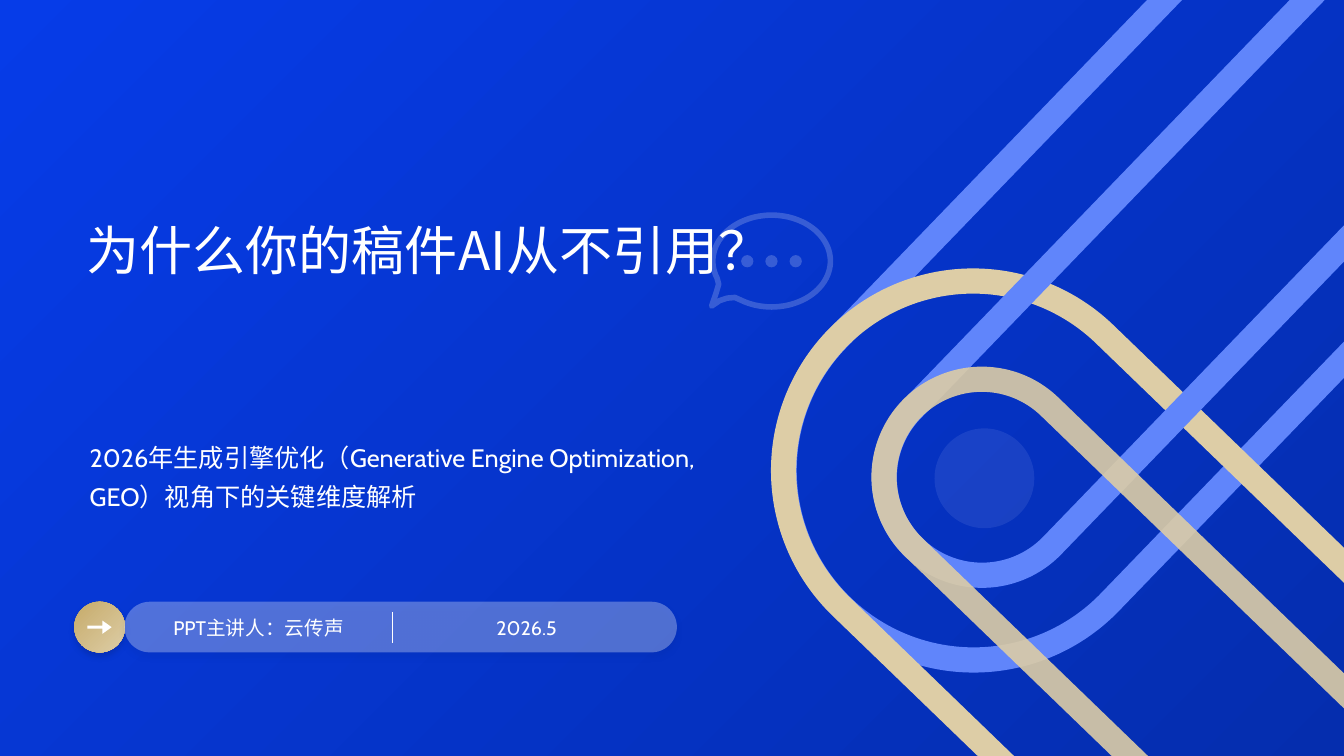
"""Build the blue title slide with interlocking rounded bands."""
from math import cos, radians, sin

from lxml import etree
from pptx import Presentation
from pptx.dml.color import RGBColor
from pptx.enum.shapes import MSO_CONNECTOR, MSO_SHAPE
from pptx.enum.text import MSO_ANCHOR, PP_ALIGN
from pptx.oxml.ns import qn
from pptx.util import Pt

OVAL = MSO_SHAPE.OVAL
PILL = MSO_SHAPE.ROUNDED_RECTANGLE
ARROW = MSO_SHAPE.RIGHT_ARROW
BAND = MSO_SHAPE.ROUND_2_SAME_RECTANGLE
RECTANGLE = MSO_SHAPE.RECTANGLE
STRAIGHT = MSO_CONNECTOR.STRAIGHT
TOP, MIDDLE = MSO_ANCHOR.TOP, MSO_ANCHOR.MIDDLE
LEFT, CENTER = PP_ALIGN.LEFT, PP_ALIGN.CENTER


def color(code):
    return RGBColor.from_string(code)


class Page:
    """Style of the deck and the slide being drawn."""

    white, blue, gold, shade = "FFFFFF", "6085FB", "DDCDA6", "031E74"
    latin, chinese = "Cabin", "Noto Sans CJK SC"

    def __init__(self, deck):
        self.shapes = deck.slides.add_slide(deck.slide_layouts[6]).shapes

    def fade(self, shape, opacity):
        """Set the opacity in percent of every colour in a shape."""
        for tint in list(shape.element.spPr.iter(qn("a:srgbClr"))):
            etree.SubElement(tint, qn("a:alpha"), val=str(opacity * 1000))

    def cast_shadow(self, shape):
        """Add a soft shadow below a shape."""
        effects = shape.element.spPr.find(qn("a:effectLst"))
        outer = etree.SubElement(
            effects, qn("a:outerShdw"), blurRad=str(Pt(4)), dist=str(Pt(3)),
            dir="5400000", algn="t", rotWithShape="0")
        tint = etree.SubElement(outer, qn("a:srgbClr"), val=self.shade)
        etree.SubElement(tint, qn("a:alpha"), val="25000")

    def shape(self, kind, bounds, fill=None, opacity=100, adjust=(), shadow=False):
        """Add a preset shape with no outline; a pair of fills is a gradient."""
        shape = self.shapes.add_shape(kind, *map(Pt, bounds))
        shape.shadow.inherit = False
        shape.line.fill.background()
        for index, value in enumerate(adjust):
            shape.adjustments[index] = value
        if fill is None:
            shape.fill.background()
        elif isinstance(fill, tuple):
            shape.fill.gradient()
            shape.fill.gradient_angle = 315
            for stop, code, place in zip(shape.fill.gradient_stops, fill, (0, 1)):
                stop.color.rgb = color(code)
                stop.position = place
        else:
            shape.fill.solid()
            shape.fill.fore_color.rgb = color(fill)
        if opacity < 100:
            self.fade(shape, opacity)
        if shadow:
            self.cast_shadow(shape)
        return shape

    def band(self, bounds, rotation, code, opacity=100):
        """Add a rotated outline with one rounded end."""
        band = self.shape(BAND, bounds, adjust=(0.5, 0))
        band.rotation = rotation
        band.line.width = Pt(18)
        band.line.color.rgb = color(code)
        if opacity < 100:
            self.fade(band, opacity)

    def outline(self, points, width, opacity):
        """Add a closed white outline through the points."""
        corners = [(Pt(x), Pt(y)) for x, y in points]
        builder = self.shapes.build_freeform(*corners[0])
        builder.add_line_segments(corners[1:], close=True)
        shape = builder.convert_to_shape()
        shape.shadow.inherit = False
        shape.fill.background()
        shape.line.width = Pt(width)
        shape.line.color.rgb = color(self.white)
        etree.SubElement(shape.element.spPr.find(qn("a:ln")), qn("a:round"))
        self.fade(shape, opacity)

    def divider(self, x, top, bottom):
        """Add a thin vertical line."""
        line = self.shapes.add_connector(STRAIGHT, Pt(x), Pt(top), Pt(x), Pt(bottom))
        line.line.width = Pt(1)
        line.line.color.rgb = color(self.white)
        etree.SubElement(line.element.spPr, qn("a:effectLst"))

    def text(self, bounds, words, size, font, spacing, align=LEFT, anchor=MIDDLE):
        """Add a wrapped white text box without margins."""
        box = self.shapes.add_textbox(*map(Pt, bounds))
        frame = box.text_frame
        frame.word_wrap = True
        frame.vertical_anchor = anchor
        frame.margin_left = frame.margin_right = 0
        frame.margin_top = frame.margin_bottom = 0
        para = frame.paragraphs[0]
        para.text = words
        para.alignment = align
        para.line_spacing = spacing
        para.font.size = Pt(size)
        para.font.name = font
        para.font.color.rgb = color(self.white)


def speech_bubble(page):
    """Draw the bubble outline with its tail and three dots."""
    center_x, center_y, radius_x, radius_y = 551.2, 186.5, 42, 32.8
    arc = [(center_x + radius_x * cos(radians(angle)),
            center_y + radius_y * sin(radians(angle)))
           for angle in range(158, 480, 4)]
    tail = [(525, 212.5), (519.5, 213), (514, 214.8), (508.3, 218.7),
            (511.5, 209.5), (513.4, 203)]
    page.outline(arc + tail, 4, 20)
    for step in (-1, 0, 1):
        page.shape(OVAL, (546.7 + step * 17.3, 182.2, 8.8, 8.8), page.white, 20)


def main():
    deck = Presentation()
    deck.slide_width, deck.slide_height = Pt(960), Pt(540)
    page = Page(deck)

    page.shape(RECTANGLE, (0, 0, 960, 540), ("063CE8", "052DAE"))
    page.band((704.9, -157.7, 270.7, 687.6), 224, page.blue)
    page.band((664.6, 156.2, 270.7, 562.3), 314, page.gold)
    page.band((758.9, -43.9, 139.7, 506.2), 224, page.blue)
    page.band((730.1, 229, 139.7, 414), 314, page.gold, 90)
    page.shape(OVAL, (667.5, 306, 71.3, 71.3), "CAD6FE", 10)

    page.shape(OVAL, (53, 429.8, 36.2, 36.2), ("C6AB6A", page.gold), shadow=True)
    page.shape(ARROW, (62.5, 443.3, 17.3, 9.4), page.white, adjust=(0.24, 0.7))
    page.shape(PILL, (88.9, 429.8, 394.6, 36.2), page.white, 30, (0.5,), True)
    for left, words in ((110.2, "PPT主讲人：云传声"), (301.7, "2026.5")):
        page.text((left, 435.6, 149, 24.5), words, 14, page.latin, 1.1, CENTER)
    page.divider(280.5, 437, 459)

    speech_bubble(page)
    page.text((61.9, 131, 463.7, 90), "为什么你的稿件AI从不引用？", 37.9, page.chinese, 1.1)
    page.text((64.1, 309.6, 460.8, 62.6),
              "2026年生成引擎优化（Generative Engine Optimization, GEO）视角下的关键维度解析",
              18, page.latin, 1.3, anchor=TOP)
    deck.save("out.pptx")


if __name__ == "__main__":
    main()
